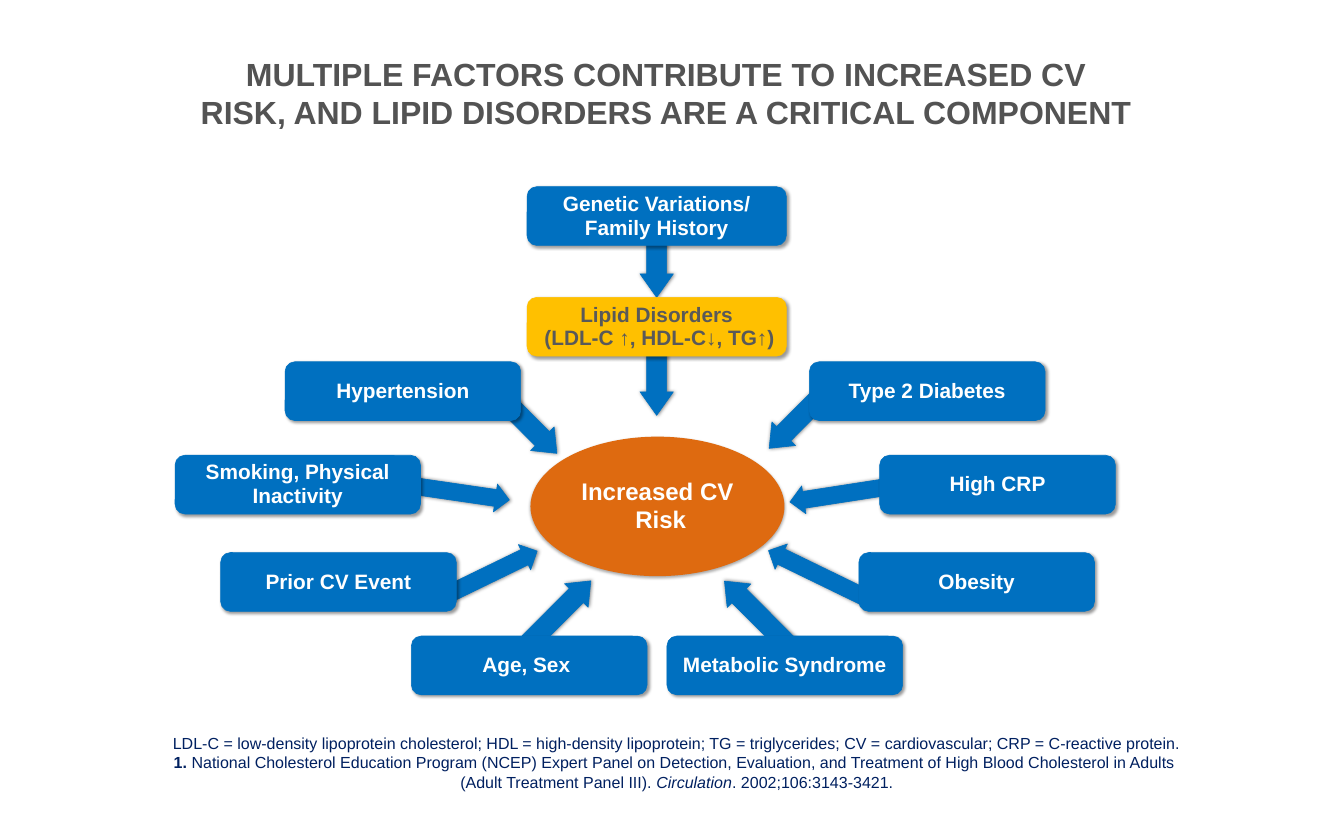
from dataclasses import dataclass

from lxml import etree
from pptx import Presentation
from pptx.dml.color import RGBColor
from pptx.enum.shapes import MSO_SHAPE
from pptx.enum.text import MSO_ANCHOR, MSO_AUTO_SIZE, PP_ALIGN
from pptx.oxml.ns import qn
from pptx.util import Cm, Pt

ARROW, ROUNDED, OVAL = MSO_SHAPE.LEFT_ARROW, MSO_SHAPE.ROUNDED_RECTANGLE, MSO_SHAPE.OVAL
MIDDLE, BOTTOM = MSO_ANCHOR.MIDDLE, MSO_ANCHOR.BOTTOM
CENTER = PP_ALIGN.CENTER
TITLE_ONLY = 5


@dataclass(frozen=True)
class Theme:
    font: str = "Arial"
    blue: str = "0070C0"
    yellow: str = "FFC000"
    orange: str = "DE6A10"
    white: str = "FFFFFF"
    title_grey: str = "535353"
    label_grey: str = "595959"
    navy: str = "002060"
    title_size: int = 40
    risk_size: int = 30
    factor_size: int = 26
    note_size: int = 20


@dataclass(frozen=True)
class Shadow:
    """Opacity in percent, blur and distance in points, angle in degrees."""
    opacity: float
    blur: float
    distance: float
    angle: float


THEME = Theme()
BOX_SHADOW = Shadow(40, 4, 3, 45)
ARROW_SHADOW = Shadow(50, 5, 1, 0)
RISK_SHADOW = Shadow(32, 3.5, 2.2, 90)

# All lengths and positions below are in centimetres.
SLIDE_SIZE = (59.26, 37.03)
BOX_HEIGHT = 2.59
BOX_WIDTH, SMOKING_WIDTH, TOP_WIDTH = 10.39, 10.82, 11.43
UPPER_ROW, MIDDLE_ROW, LOWER_ROW, BOTTOM_ROW = 15.95, 20.07, 24.36, 28.04
TOP_LEFT = 23.24

TITLE = "MULTIPLE FACTORS CONTRIBUTE TO INCREASED CV \nRISK, AND LIPID DISORDERS ARE A CRITICAL COMPONENT "
TITLE_FRAME = (2.41, 1.24, 54.31, 5.69)
RISK = "Increased CV\n Risk"
RISK_FRAME = (23.39, 19.25, 11.2, 6.15)

# label, left, top, width, fill, text colour
FACTORS = [
    ("Genetic Variations/\nFamily History", TOP_LEFT, 8.23, TOP_WIDTH, THEME.blue, THEME.white),
    ("Lipid Disorders\n (LDL-C ↑, HDL-C↓, TG↑)", TOP_LEFT, 13.11, TOP_WIDTH,
     THEME.yellow, THEME.label_grey),
    ("Hypertension", 12.57, UPPER_ROW, BOX_WIDTH, THEME.blue, THEME.white),
    ("Smoking, Physical Inactivity", 7.72, MIDDLE_ROW, SMOKING_WIDTH, THEME.blue, THEME.white),
    ("Prior CV Event", 9.73, LOWER_ROW, BOX_WIDTH, THEME.blue, THEME.white),
    ("Age, Sex ", 18.14, BOTTOM_ROW, BOX_WIDTH, THEME.blue, THEME.white),
    ("Metabolic Syndrome", 29.41, BOTTOM_ROW, BOX_WIDTH, THEME.blue, THEME.white),
    ("Obesity", 37.87, LOWER_ROW, BOX_WIDTH, THEME.blue, THEME.white),
    ("High CRP", 38.79, MIDDLE_ROW, BOX_WIDTH, THEME.blue, THEME.white),
    ("Type 2 Diabetes", 35.69, UPPER_ROW, BOX_WIDTH, THEME.blue, THEME.white),
]

# arrow style: thickness, head length as a share of thickness
VERTICAL, DIAGONAL, FLAT = (1.47, 0.706), (1.47, 0.618), (1.24, 0.5)

# left, top and length before turning, clockwise turn from pointing left, style
ARROWS = [
    (27.48, 10.9, 2.95, 270, VERTICAL),
    (27.48, 16.1, 2.95, 270, VERTICAL),
    (21.74, 18.08, 3.3, 225.1, DIAGONAL),
    (18.19, 21.11, 4.29, 188.3, FLAT),
    (19.61, 24.61, 4.29, 154.1, FLAT),
    (22.76, 26.24, 3.86, 134.9, DIAGONAL),
    (31.34, 26.34, 4.11, 45.1, DIAGONAL),
    (33.63, 24.77, 5.13, 25.9, FLAT),
    (34.8, 21.11, 5.23, 351.2, FLAT),
    (33.43, 17.86, 3.3, 314.9, DIAGONAL),
]

# paragraphs of (text, bold, italic)
NOTES = [
    [("LDL-C = low-density lipoprotein cholesterol; HDL = high-density lipoprotein; "
      "TG = triglycerides; CV = cardiovascular; CRP = C-reactive protein.", False, False)],
    [("1. ", True, False),
     ("National Cholesterol Education Program (NCEP) Expert Panel on Detection, Evaluation, "
      "and Treatment of High Blood Cholesterol in Adults \n(Adult Treatment Panel III). ",
      False, False),
     ("Circulation", False, True),
     (". 2002;106:3143-3421.", False, False)],
]
NOTES_FRAME = (3.86, 32.31, 51.97, 2.57)


def lengths(frame):
    return [Cm(value) for value in frame]


def set_shadow(shape, shadow):
    shape.shadow.inherit = False
    effects = shape.element.spPr.find(qn("a:effectLst"))
    outer = etree.SubElement(effects, qn("a:outerShdw"), blurRad=str(Pt(shadow.blur)),
                             dist=str(Pt(shadow.distance)), dir=str(shadow.angle * 60000),
                             algn="ctr", rotWithShape="0")
    color = etree.SubElement(outer, qn("a:srgbClr"), val="000000")
    etree.SubElement(color, qn("a:alpha"), val=str(shadow.opacity * 1000))


def add_figure(page, kind, frame, fill, shadow, outlined=True):
    shape = page.shapes.add_shape(kind, *lengths(frame))
    shape.fill.solid()
    shape.fill.fore_color.rgb = RGBColor.from_string(fill)
    if outlined:
        shape.line.color.rgb = RGBColor.from_string(fill)
        shape.line.width = Pt(0.75)
    else:
        shape.line.fill.background()
    set_shadow(shape, shadow)
    return shape


def set_frame(box, anchor, side, top):
    """Wrap the text of a box, anchor it and set its side and top/bottom insets."""
    frame = box.text_frame
    frame.word_wrap = True
    frame.auto_size = MSO_AUTO_SIZE.NONE
    frame.vertical_anchor = anchor
    frame.margin_left = frame.margin_right = Cm(side)
    frame.margin_top = frame.margin_bottom = Cm(top)
    return frame


def write(para, text, size, color, bold=False, italic=False):
    """Add text as centred runs, with a line break at each newline."""
    para.alignment = CENTER
    for index, line in enumerate(text.split("\n")):
        if index:
            para.add_line_break()
        span = para.add_run()
        span.text = line
        span.font.name = THEME.font
        span.font.size = Pt(size)
        span.font.bold = bold
        span.font.italic = italic
        span.font.color.rgb = RGBColor.from_string(color)


def add_title(page):
    title = page.shapes.title
    title.left, title.top, title.width, title.height = lengths(TITLE_FRAME)
    para = set_frame(title, MIDDLE, 0.18, 0.18).paragraphs[0]
    write(para, TITLE, THEME.title_size, THEME.title_grey, bold=True)


def add_arrow(page, left, top, length, turn, style):
    thickness, head = style
    arrow = add_figure(page, ARROW, (left, top, length, thickness), THEME.blue, ARROW_SHADOW)
    arrow.adjustments[0], arrow.adjustments[1] = 0.6, head
    arrow.rotation = turn


def add_label(shape, text, size, color, side, top):
    para = set_frame(shape, MIDDLE, side, top).paragraphs[0]
    para.line_spacing = 0.95
    write(para, text, size, color, bold=True)


def add_notes(page):
    box = page.shapes.add_textbox(*lengths(NOTES_FRAME))
    frame = set_frame(box, BOTTOM, 0, 0)
    for index, spans in enumerate(NOTES):
        para = frame.add_paragraph() if index else frame.paragraphs[0]
        for text, bold, italic in spans:
            write(para, text, THEME.note_size, THEME.navy, bold, italic)


def main():
    deck = Presentation()
    deck.slide_width, deck.slide_height = lengths(SLIDE_SIZE)
    page = deck.slides.add_slide(deck.slide_layouts[TITLE_ONLY])
    add_title(page)
    for arrow in ARROWS:
        add_arrow(page, *arrow)
    risk = add_figure(page, OVAL, RISK_FRAME, THEME.orange, RISK_SHADOW, outlined=False)
    add_label(risk, RISK, THEME.risk_size, THEME.white, 0.1, 0.1)
    for text, left, top, width, fill, color in FACTORS:
        box = add_figure(page, ROUNDED, (left, top, width, BOX_HEIGHT), fill, BOX_SHADOW)
        add_label(box, text, THEME.factor_size, color, 0.2, 0.2)
    add_notes(page)
    deck.save("out.pptx")


if __name__ == "__main__":
    main()
